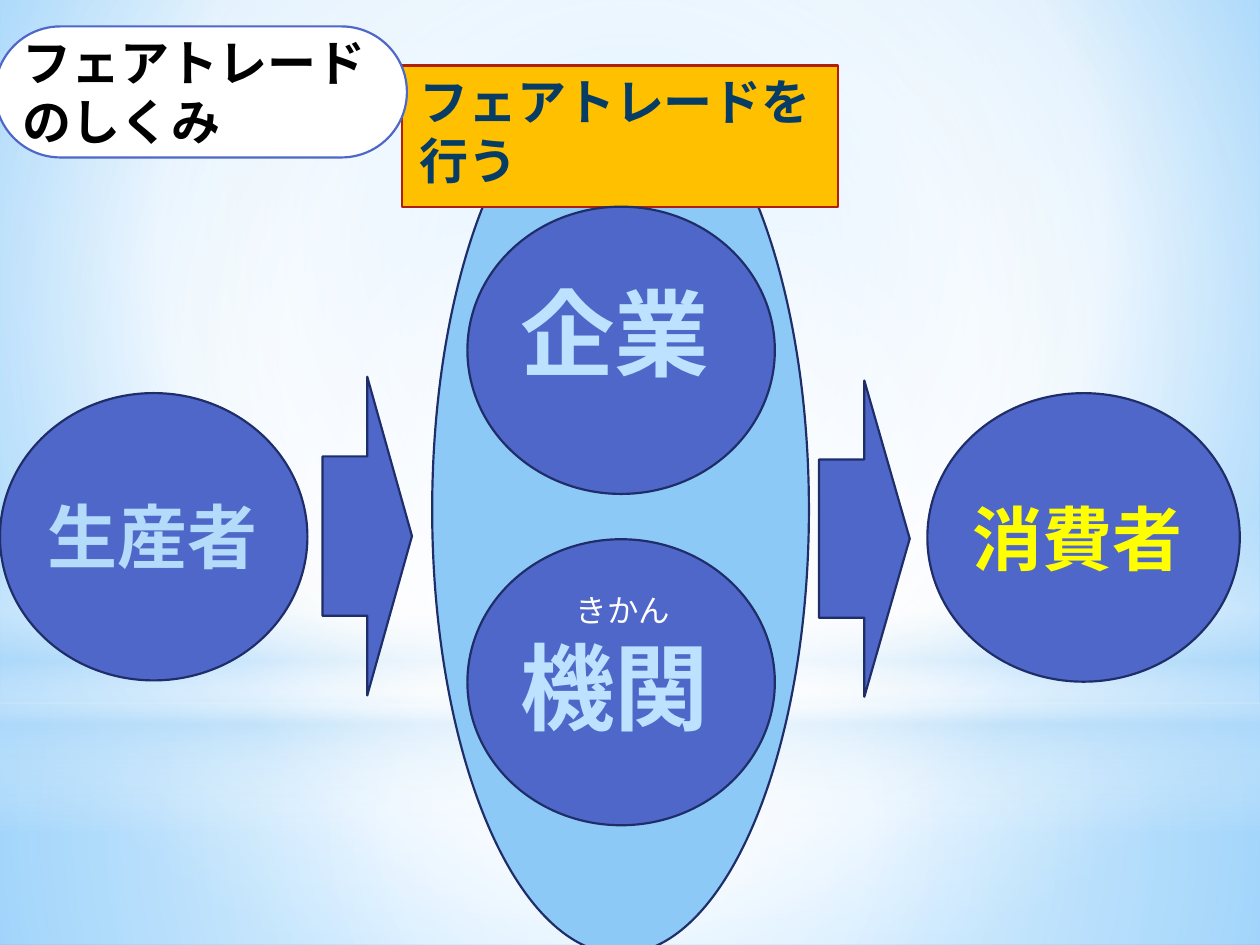
from dataclasses import dataclass
from typing import Optional

from lxml import etree
from pptx import Presentation
from pptx import util as u
from pptx.dml.color import RGBColor
from pptx.enum import lang, shapes, text
from pptx.oxml import parse_xml
from pptx.oxml.ns import nsdecls, qn

FONT = "Roboto"
C = {
    "blue": "4E67C8", "navy": "1F2E69", "sky": "8CC9F7", "gold": "FFC000",
    "red": "B01F07", "white": "FFFFFF", "black": "000000", "ink": "073C65",
    "pale": "B4DCFA", "ice": "BDE2FF", "yellow": "FFFF00",
    "bg_light": "9ED5FF", "bg_deep": "5BB9FF",
}
M = shapes.MSO_SHAPE
Box = tuple[float, float, float, float]


@dataclass
class Gradient:
    """Stops are (position %, colour, opacity %); focus is the inner rectangle in %."""
    stops: list[tuple[int, str, int]]
    focus: Optional[tuple[int, int, int, int]] = (50, 50, 50, 50)


@dataclass
class Shape:
    kind: M
    box: Box
    fill: str = "blue"
    line: str = "navy"


@dataclass
class Line:
    text: str
    size: float
    color: str
    bold: bool = True
    indent: float = 0


@dataclass
class Label:
    box: Box
    lines: list[Line]


BACKDROP = Gradient([(0, "bg_light", 100), (60, "white", 100), (100, "bg_deep", 100)],
                    (20, 10, 20, 60))
GLOWS = [
    (M.RECTANGLE, (0, 5.58, 10, 1.92),
     Gradient([(0, "white", 91), (37, "white", 76), (100, "pale", 79)])),
    (M.RECTANGLE, (0, 0, 10, 5.58),
     Gradient([(0, "white", 89), (48, "white", 62), (100, "pale", 79)])),
    (M.RECTANGLE, (0, 4.12, 10, 2.5),
     Gradient([(0, "white", 0), (29, "white", 30), (45, "pale", 40),
               (55, "white", 26), (65, "pale", 60), (100, "white", 0)], None)),
    (M.OVAL, (0, 1.75, 10, 5.58),
     Gradient([(0, "white", 100), (56, "white", 0)])),
]
ITEMS = [
    Shape(M.OVAL, (3.43, 0.52, 2.99, 7.05), "sky"),
    Shape(M.RECTANGLE, (3.19, 0.52, 3.46, 1.12), "gold", "red"),
    Label((3.23, 0.52, 3.43, 1.04), [Line("フェアトレードを行う", 28, "ink")]),
    Shape(M.OVAL, (3.71, 1.64, 2.44, 2.28)),
    Shape(M.OVAL, (0, 3.12, 2.44, 2.28)),
    Shape(M.OVAL, (7.36, 3.12, 2.48, 2.29)),
    Shape(M.OVAL, (3.71, 4.28, 2.44, 2.27)),
    Shape(M.ROUNDED_RECTANGLE, (-0.04, 0.21, 3.27, 1.04), "white", "blue"),
    Label((0.28, 3.87, 1.97, 0.77), [Line("生産者", 40, "pale")]),
    Shape(M.RIGHT_ARROW, (2.56, 2.99, 0.71, 2.53)),
    Shape(M.RIGHT_ARROW, (6.5, 3.02, 0.72, 2.51)),
    Label((0.08, 0.21, 3.11, 1.04), [Line("フェアトレードのしくみ", 28, "black")]),
    Label((4.03, 2.13, 1.89, 1.01), [Line("企業", 54, "ice")]),
    Label((4.03, 4.64, 1.75, 1.31), [Line("きかん", 18, "white", False, 0.44),
                                     Line("機関", 54, "ice")]),
    Label((7.62, 3.88, 1.97, 0.77), [Line("消費者", 40, "yellow")]),
]


def rgb(name: str) -> RGBColor:
    return RGBColor.from_string(C[name])


def inches(box: Box) -> list[u.Length]:
    return [u.Inches(v) for v in box]


def set_gradient(props, grad: Gradient) -> None:
    """Swap the solid fill in the given properties element for a gradient."""
    stops = "".join(
        f'<a:gs pos="{pos * 1000}"><a:srgbClr val="{C[color]}">'
        f'<a:alpha val="{alpha * 1000}"/></a:srgbClr></a:gs>'
        for pos, color, alpha in grad.stops)
    if grad.focus:
        sides = " ".join(f'{k}="{v * 1000}"' for k, v in zip("ltrb", grad.focus))
        shade = f'<a:path path="circle"><a:fillToRect {sides}/></a:path>'
    else:
        shade = '<a:lin ang="5400000" scaled="0"/>'
    fill = parse_xml(f'<a:gradFill {nsdecls("a")} rotWithShape="1">'
                     f'<a:gsLst>{stops}</a:gsLst>{shade}</a:gradFill>')
    props.replace(props.find(qn("a:solidFill")), fill)


def add_glow(s, kind: M, box: Box, grad: Gradient) -> None:
    sp = s.shapes.add_shape(kind, *inches(box))
    sp.shadow.inherit = False
    sp.line.fill.background()
    sp.fill.solid()
    set_gradient(sp.element.spPr, grad)


def add_outlined(s, item: Shape) -> None:
    sp = s.shapes.add_shape(item.kind, *inches(item.box))
    sp.shadow.inherit = False
    sp.fill.solid()
    sp.fill.fore_color.rgb = rgb(item.fill)
    sp.line.color.rgb = rgb(item.line)
    sp.line.width = u.Pt(1.25)
    if item.kind == M.ROUNDED_RECTANGLE:
        sp.adjustments[0] = 0.5


def add_label(s, label: Label) -> None:
    tf = s.shapes.add_textbox(*inches(label.box)).text_frame
    tf.word_wrap = True
    tf.auto_size = text.MSO_AUTO_SIZE.SHAPE_TO_FIT_TEXT
    for i, line in enumerate(label.lines):
        p = tf.add_paragraph() if i else tf.paragraphs[0]
        p.text = line.text
        if line.indent:
            p._p.get_or_add_pPr().set("marL", str(u.Inches(line.indent)))
        r = p.runs[0]
        r.font.name = FONT
        r.font.size = u.Pt(line.size)
        r.font.bold = line.bold
        r.font.color.rgb = rgb(line.color)
        r.font.language_id = lang.MSO_LANGUAGE_ID.JAPANESE
        latin = r.font._element.find(qn("a:latin"))
        east_asian = etree.Element(qn("a:ea"), typeface=FONT)
        latin.addnext(east_asian)


def main() -> None:
    prs = Presentation()
    prs.slide_width, prs.slide_height = u.Inches(10), u.Inches(7.5)
    s = prs.slides.add_slide(prs.slide_layouts[6])
    s.background.fill.solid()
    set_gradient(s.element.find(".//" + qn("p:bgPr")), BACKDROP)
    for glow in GLOWS:
        add_glow(s, *glow)
    for item in ITEMS:
        if isinstance(item, Shape):
            add_outlined(s, item)
        else:
            add_label(s, item)
    prs.save("out.pptx")


if __name__ == "__main__":
    main()
